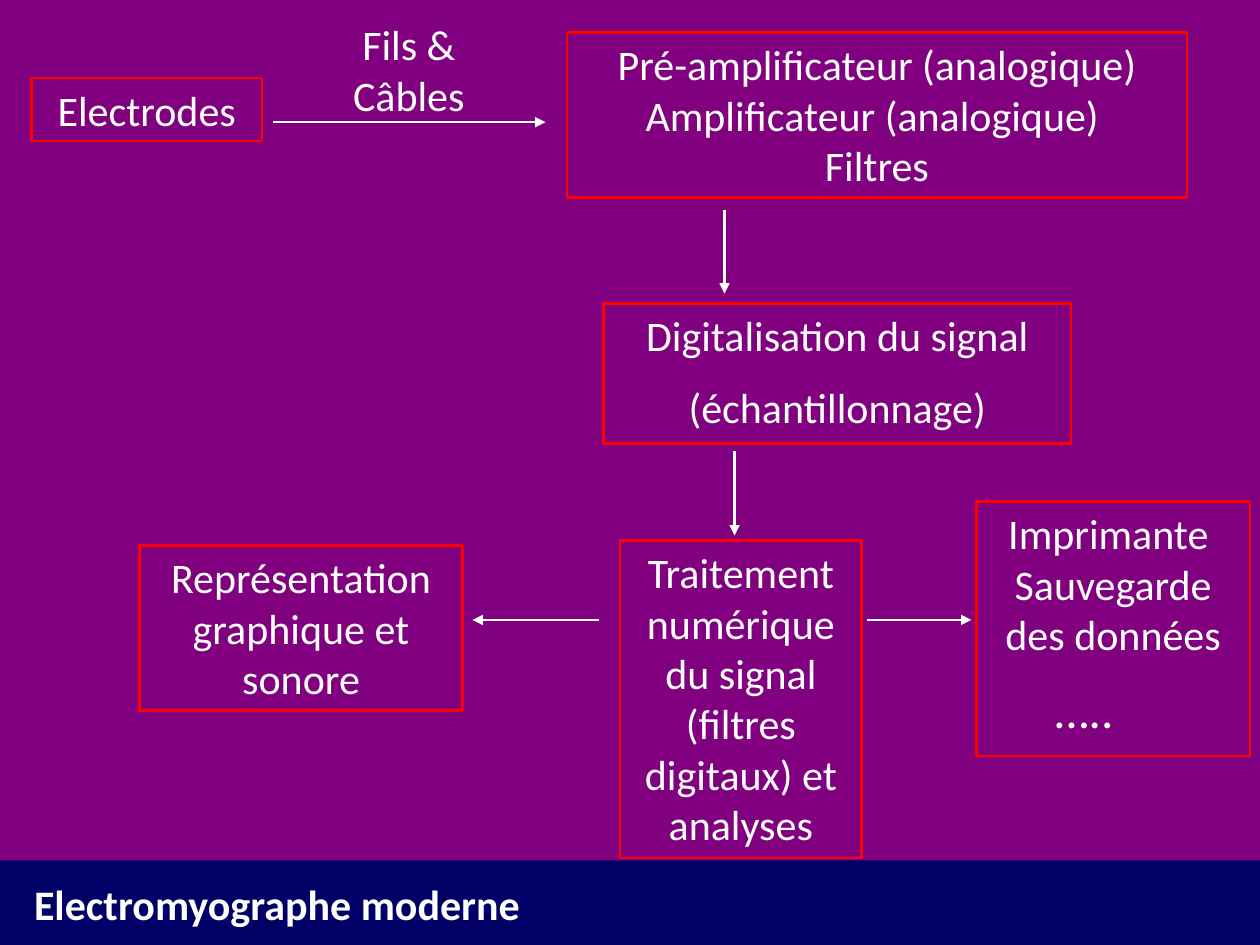
"""Build a flow diagram of a modern electromyograph."""
import dataclasses

import lxml.etree
import pptx
import pptx.dml.color
import pptx.enum.shapes
import pptx.enum.text
import pptx.oxml.ns
import pptx.util

Inches = pptx.util.Inches
Pt = pptx.util.Pt
RGB = pptx.dml.color.RGBColor.from_string
Align = pptx.enum.text.PP_ALIGN
Shape = pptx.enum.shapes.MSO_SHAPE
qn = pptx.oxml.ns.qn


@dataclasses.dataclass(frozen=True)
class Theme:
    back: str = "000066"
    panel: str = "800080"
    frame: str = "FF0000"
    text: str = "FFFFFF"
    font: str = "Calibri"
    size: int = 24
    large: int = 28
    gap: int = 12
    line: float = 1.5


def write(frame, text, theme, bold=False, align=Align.CENTER):
    frame.word_wrap = True
    frame.auto_size = pptx.enum.text.MSO_AUTO_SIZE.NONE
    frame.vertical_anchor = pptx.enum.text.MSO_ANCHOR.TOP
    frame.text = text
    for i, para in enumerate(frame.paragraphs):
        para.alignment = align
        para.space_before = Pt(theme.gap if i else 0)
        for run in para.runs:
            font = run.font
            font.name, font.size, font.bold = theme.font, Pt(theme.size), bold
            font.color.rgb = RGB(theme.text)


class Deck:
    def __init__(self, theme):
        self.theme = theme
        self.file = pptx.Presentation()
        self.file.slide_width, self.file.slide_height = Inches(10), Inches(7.5)
        self.slide = self.file.slides.add_slide(self.file.slide_layouts[5])
        fill = self.slide.background.fill
        fill.solid()
        fill.fore_color.rgb = RGB(theme.back)

    def panel(self, *area):
        item = self.slide.shapes.add_shape(Shape.RECTANGLE, *map(Inches, area))
        item.shadow.inherit = False
        item.fill.solid()
        item.fill.fore_color.rgb = RGB(self.theme.panel)
        item.line.fill.background()

    def title(self, text, *area):
        item = self.slide.shapes.title
        item.left, item.top, item.width, item.height = map(Inches, area)
        write(item.text_frame, text, self.theme, bold=True, align=Align.LEFT)

    def label(self, text, *area):
        item = self.slide.shapes.add_textbox(*map(Inches, area))
        write(item.text_frame, text, self.theme)

    def box(self, text, *area):
        item = self.slide.shapes.add_shape(Shape.RECTANGLE, *map(Inches, area))
        item.shadow.inherit = False
        item.fill.background()
        item.line.color.rgb = RGB(self.theme.frame)
        item.line.width = Pt(self.theme.line)
        write(item.text_frame, text, self.theme)
        return item.text_frame

    def arrow(self, *ends):
        kind = pptx.enum.shapes.MSO_CONNECTOR.STRAIGHT
        item = self.slide.shapes.add_connector(kind, *map(Inches, ends))
        item.line.color.rgb = RGB(self.theme.text)
        item.line.width = Pt(self.theme.line)
        props = item._element.spPr
        lxml.etree.SubElement(props.find(qn("a:ln")), qn("a:tailEnd"), type="triangle")
        lxml.etree.SubElement(props, qn("a:effectLst"))


def main():
    theme = Theme()
    deck = Deck(theme)
    deck.panel(0, 0, 10, 6.83)
    deck.title("Electromyographe moderne", 0.17, 6.92, 6.67, 0.5)

    deck.label("Fils & Câbles", 2.33, 0.1, 1.83, 0.91)
    deck.box("Electrodes", 0.25, 0.62, 1.83, 0.5)
    deck.box("Pré-amplificateur (analogique) Amplificateur (analogique) \vFiltres",
             4.5, 0.26, 4.92, 1.31)
    deck.box("Digitalisation du signal\n(échantillonnage)", 4.79, 2.41, 3.71, 1.11)
    deck.box("Traitement numérique du signal (filtres digitaux) et analyses",
             4.92, 4.29, 1.92, 2.52)
    deck.box("Représentation graphique et sonore", 1.11, 4.33, 2.56, 1.31)
    store = deck.box("Imprimante \vSauvegarde des données\n…..", 7.75, 3.98, 2.17, 2.02)
    dots = store.paragraphs[-1]
    dots.runs[0].font.size = Pt(theme.large)
    dots._p.get_or_add_pPr().set("marR", str(Inches(0.46)))

    for ends in (
        (2.17, 0.97, 4.33, 0.97),
        (5.75, 1.67, 5.75, 2.33),
        (5.83, 3.58, 5.83, 4.25),
        (4.75, 4.92, 3.75, 4.92),
        (6.88, 4.92, 7.71, 4.92),
    ):
        deck.arrow(*ends)
    deck.file.save("out.pptx")


if __name__ == "__main__":
    main()
